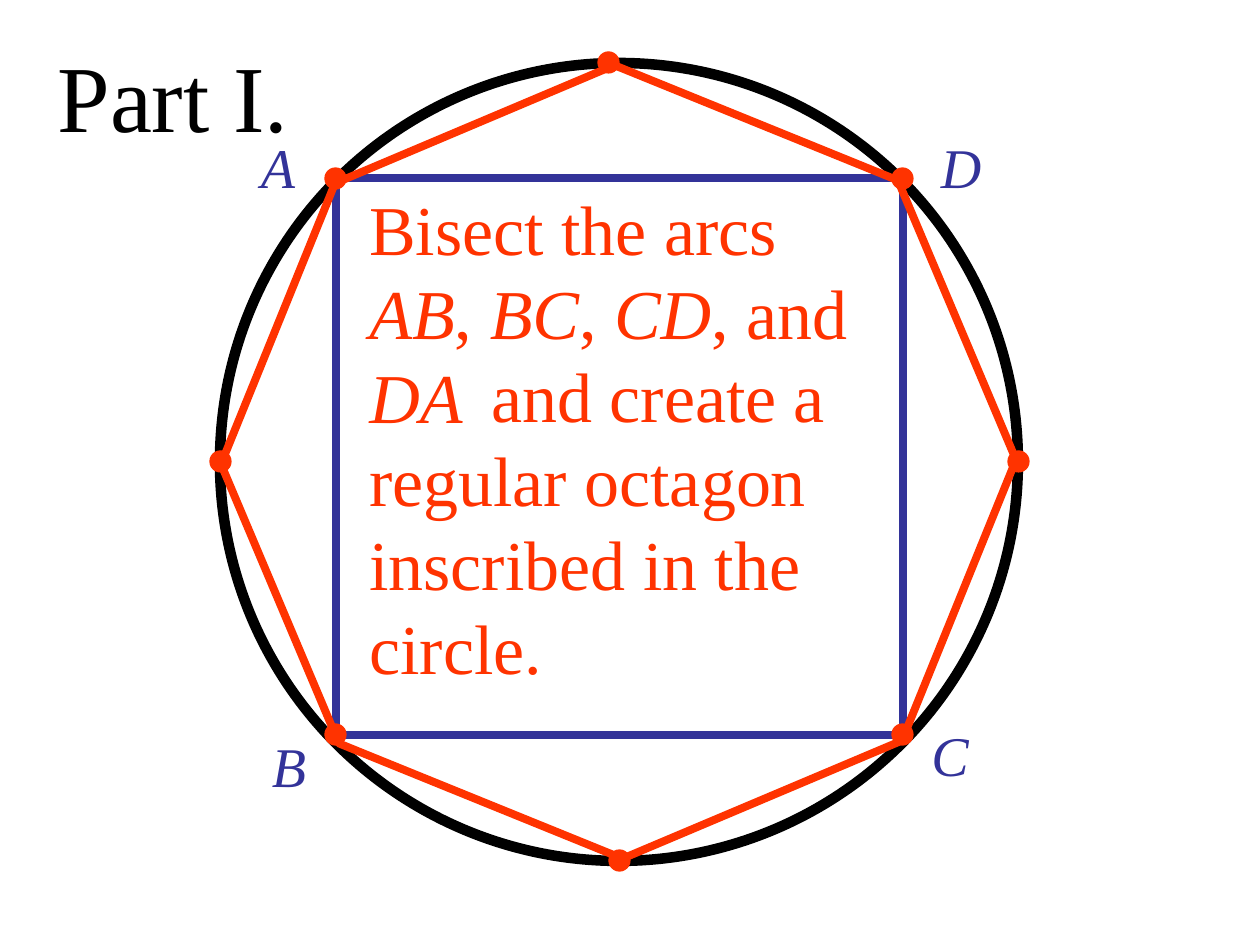
from pptx import Presentation
from pptx.dml.color import RGBColor
from pptx.enum.shapes import MSO_SHAPE as SHAPE
from pptx.enum.text import MSO_AUTO_SIZE as AUTO_SIZE, PP_ALIGN as ALIGN
from pptx.util import Pt

PX = 914400 // 126
FONT = "Times New Roman"
BLACK = RGBColor(0x00, 0x00, 0x00)
BLUE = RGBColor(0x33, 0x33, 0x99)
RED = RGBColor(0xFF, 0x33, 0x00)
DOT_SIZE = 21


def px(*lengths):
    return [round(length * PX) for length in lengths]


def add_outline(slide, kind, box, color, width, fill=None):
    shape = slide.shapes.add_shape(kind, *px(*box))
    shape.shadow.inherit = False
    if fill is None:
        shape.fill.background()
    else:
        shape.fill.solid()
        shape.fill.fore_color.rgb = fill
    shape.line.color.rgb = color
    shape.line.width = Pt(width)
    return shape


def add_dot(slide, left, top):
    add_outline(slide, SHAPE.OVAL, (left, top, DOT_SIZE, DOT_SIZE), RED, 0.75, RED)


def add_text(slide, box, runs, size, color, align=ALIGN.LEFT, indent=0):
    """Add one paragraph of (text, italic) runs."""
    frame = slide.shapes.add_textbox(*px(*box)).text_frame
    frame.word_wrap = True
    frame.auto_size = AUTO_SIZE.SHAPE_TO_FIT_TEXT
    paragraph = frame.paragraphs[0]
    paragraph.alignment = align
    if indent:
        properties = paragraph._p.get_or_add_pPr()
        properties.set("marL", "0")
        properties.set("indent", str(indent * PX))
    for text, italic in runs:
        run = paragraph.add_run()
        run.text = text
        run.font.color.rgb = color
        formats = {"name": FONT, "size": Pt(size), "italic": italic}
        for name, value in formats.items():
            setattr(run.font, name, value)


def main():
    presentation = Presentation()
    presentation.slide_width, presentation.slide_height = px(1260, 945)
    slide = presentation.slides.add_slide(presentation.slide_layouts[6])

    # Square and its circumscribed circle
    add_outline(slide, SHAPE.RECTANGLE, (336, 178, 567, 557), BLUE, 4.5)
    add_outline(slide, SHAPE.OVAL, (220, 63, 798, 798), BLACK, 6)

    # Title and vertex labels
    add_text(slide, (42, 32, 262, 126), [("Part I.", False)], 54, BLACK, ALIGN.CENTER)
    labels = {"A": (231, 126), "B": (242, 725), "C": (903, 714), "D": (914, 126)}
    for letter, corner in labels.items():
        add_text(slide, (*corner, 94, 79), [(letter, True)], 32, BLUE, ALIGN.CENTER)

    # Instruction, continued after the last arc name
    arcs = [("Bisect the arcs ", False), ("AB", True), (", ", False), ("BC", True),
            (", ", False), ("CD", True), (", and ", False), ("DA", True)]
    add_text(slide, (357, 179, 504, 265), arcs, 40, RED)
    task = "and create a regular octagon inscribed in the circle."
    add_text(slide, (357, 346, 504, 349), [(task, False)], 40, RED, indent=122)

    # Octagon with a dot on each vertex
    octagon = add_outline(slide, SHAPE.OCTAGON, (251, 96, 735, 732), RED, 4.5)
    octagon.adjustments[0] = 0.293
    octagon.rotation = 22.1
    for left, top in [(598, 52), (210, 451), (609, 850), (1008, 451)]:
        add_dot(slide, left, top)
    for left in (325, 892):
        for top in (168, 724):
            add_dot(slide, left, top)

    presentation.save("out.pptx")


if __name__ == "__main__":
    main()
